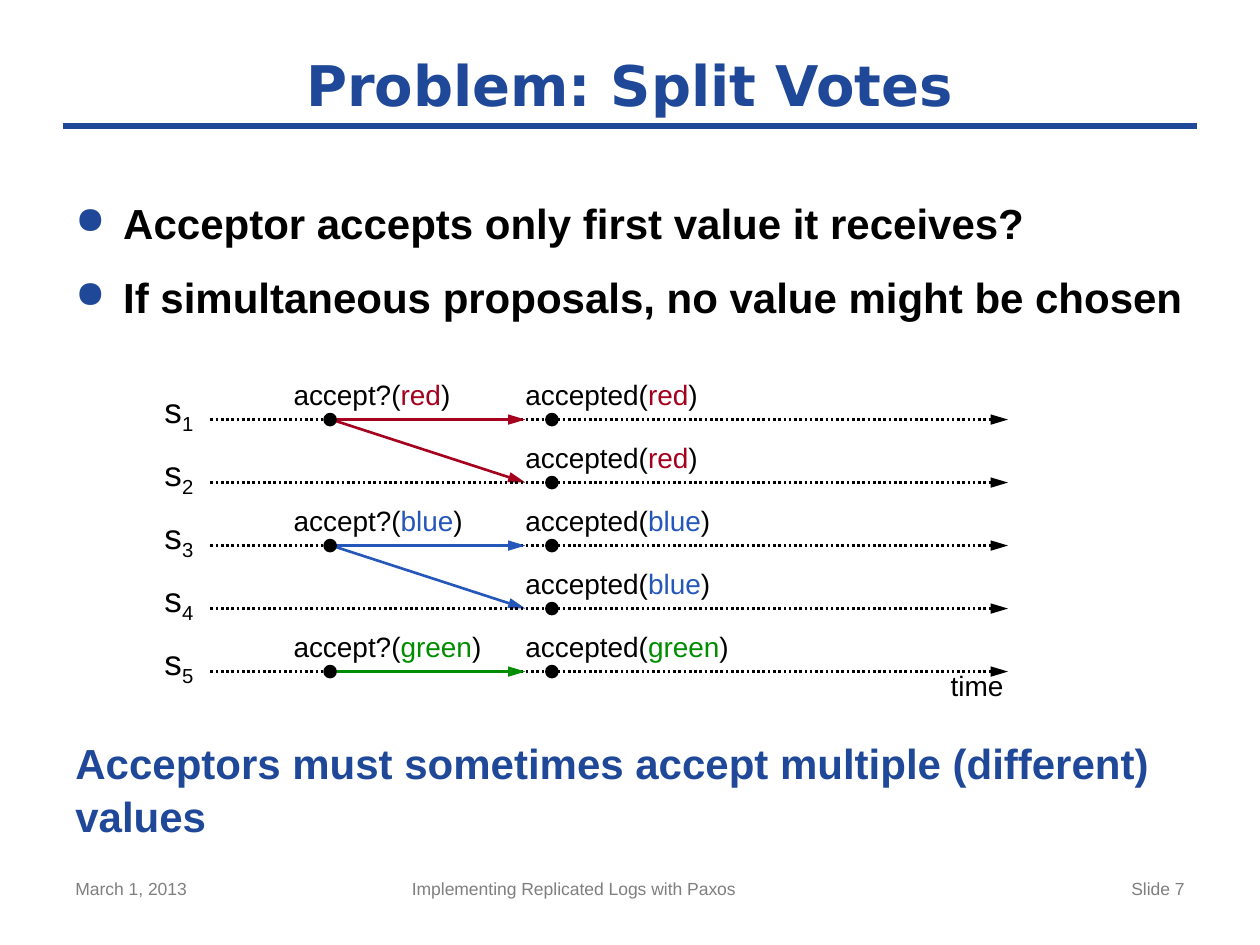
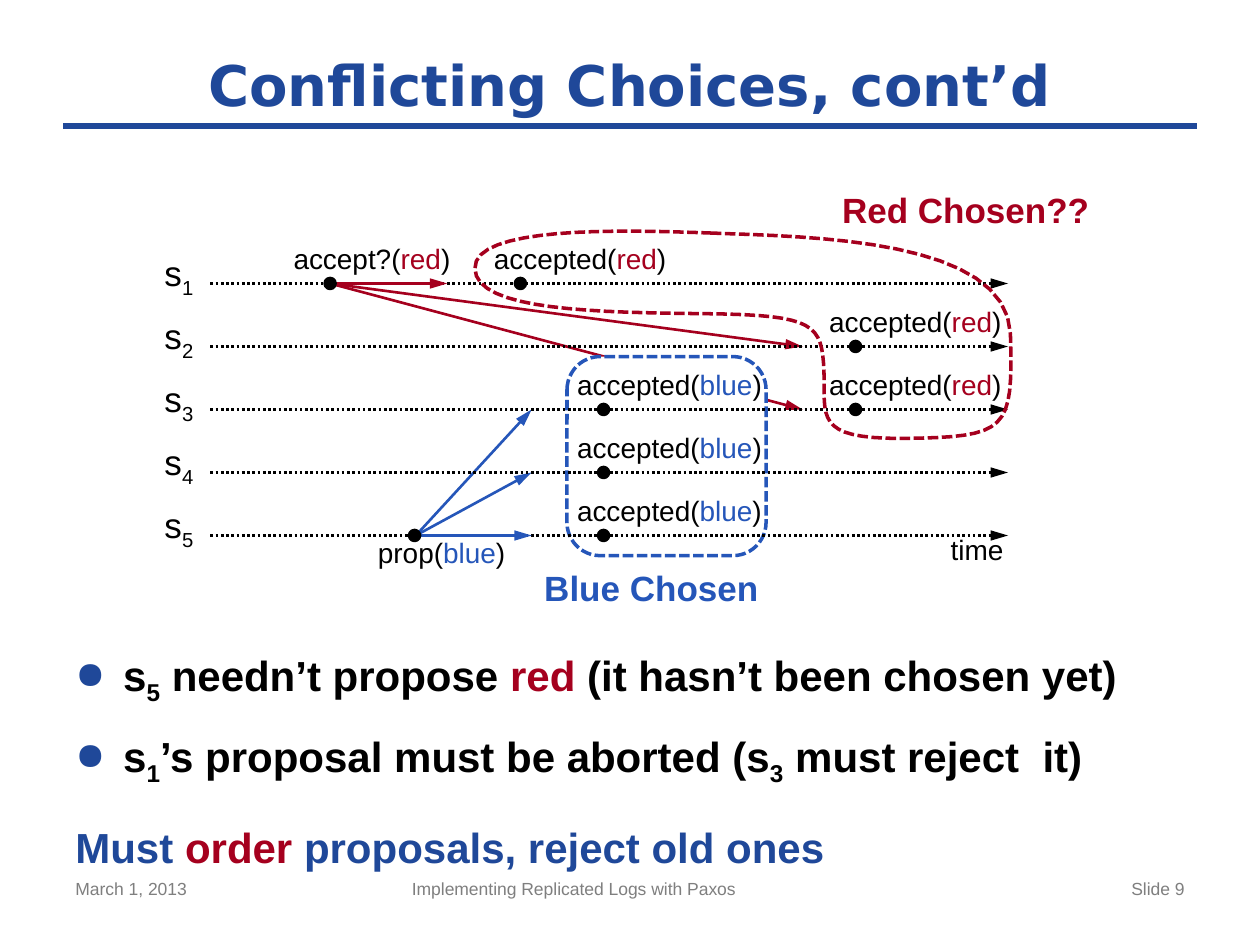
import pptx
import pptx.util
import pptx.dml.color
import pptx.enum.dml
import pptx.enum.shapes
import pptx.enum.text
import pptx.oxml.ns
import lxml.etree

Inches, Pt = pptx.util.Inches, pptx.util.Pt
RGB = pptx.dml.color.RGBColor.from_string
Dash = pptx.enum.dml.MSO_LINE
Kind = pptx.enum.shapes.MSO_SHAPE
Align = pptx.enum.text.PP_ALIGN
Anchor = pptx.enum.text.MSO_ANCHOR
Fit = pptx.enum.text.MSO_AUTO_SIZE
qn = pptx.oxml.ns.qn

HUES = {"navy": "1F4899", "black": "000000", "red": "A5001E", "blue": "2556B9",
        "green": "008E00", "gray": "7F7F7F", "white": "FFFFFF"}
GAP = 0.5  # distance between server timelines


def write(slide, box, paras, size, bold=False, align=Align.LEFT, face="Arial", tight=True):
    """Add a text box; a paragraph is a list of (text, hue, subscript) runs."""
    shape = slide.shapes.add_textbox(*map(Inches, box))
    frame = shape.text_frame
    frame.word_wrap = True
    if tight:
        frame.margin_left = frame.margin_right = frame.margin_top = frame.margin_bottom = 0
        frame.auto_size = Fit.SHAPE_TO_FIT_TEXT
    for i, runs in enumerate(paras):
        para = frame.paragraphs[0] if i == 0 else frame.add_paragraph()
        para.alignment = align
        for text, hue, *sub in runs:
            run = para.add_run()
            run.text = text
            run.font.size, run.font.bold, run.font.name = Pt(size), bold, face
            run.font.color.rgb = RGB(HUES[hue])
            if sub:
                run._r.get_or_add_rPr().set("baseline", "-25000")
    return frame


def draw(slide, ends, hue, width=1.5, dash=None, head=True):
    """Add a straight line, with an arrowhead at its far end if asked."""
    link = slide.shapes.add_connector(
        pptx.enum.shapes.MSO_CONNECTOR.STRAIGHT, *map(Inches, ends))
    link.line.color.rgb = RGB(HUES[hue])
    link.line.width = Pt(width)
    if dash:
        link.line.dash_style = dash
    if head:
        lxml.etree.SubElement(link.line._get_or_add_ln(), qn("a:tailEnd"),
                              type="triangle", w="med", len="lg")
    lxml.etree.SubElement(link._element.spPr, qn("a:effectLst"))


# Slide content; arrows are (x, row, x, row, hue), labels (left, row, verb, value, width)
split = {
    "title": "Problem: Split Votes", "page": 7, "top": 3.33,
    "body": (0.5, 1.5, 9, 1.33), "rise": 236,
    "paras": [
        [("Acceptor accepts only first value it receives?", "black")],
        [("If simultaneous proposals, no value might be chosen", "black")],
        [("Acceptors must sometimes accept multiple (different) values", "navy")]],
    "arrows": [(2.63, 3, 4.17, 4, "blue"), (2.63, 1, 4.17, 2, "red"),
               (2.63, 1, 4.17, 1, "red"), (2.63, 3, 4.17, 3, "blue"),
               (2.63, 5, 4.17, 5, "green")],
    "labels": [(2.33, 1, "accept?", "red", 1.33), (2.33, 3, "accept?", "blue", 1.58),
               (2.33, 5, "accept?", "green", 1.5), (4.17, 1, "accepted", "red", 1.75),
               (4.17, 2, "accepted", "red", 1.75), (4.17, 3, "accepted", "blue", 1.92),
               (4.17, 4, "accepted", "blue", 1.92), (4.17, 5, "accepted", "green", 2)],
    "group": None, "notes": [], "curves": []}

clash = {
    "title": "Conflicting Choices, cont’d", "page": 9, "top": 2.25,
    "body": (0.5, 5.08, 9, 1.83), "rise": 18,
    "paras": [
        [("s", "black"), ("5", "black", True), (" needn’t propose ", "black"),
         ("red", "red"), (" (it hasn’t been chosen yet)", "black")],
        [("s", "black"), ("1", "black", True), ("’s proposal must be aborted (s", "black"),
         ("3", "black", True), (" must reject  it)", "black")],
        [("Must ", "navy"), ("order", "red"), (" proposals, reject old ones", "navy")]],
    "arrows": [(2.62, 1, 6.37, 3, "red"), (2.62, 1, 6.37, 2, "red"),
               (3.3, 5, 4.22, 4, "blue"), (3.3, 5, 4.22, 3, "blue"),
               (2.63, 1, 3.55, 1, "red"), (3.3, 5, 4.22, 5, "blue")],
    "labels": [(2.33, 1, "accept?", "red", 1.33), (3, 5, "prop", "blue", 1.17),
               (3.92, 1, "accepted", "red", 1.75), (6.58, 2, "accepted", "red", 1.75),
               (6.58, 3, "accepted", "red", 1.92), (4.58, 3, "accepted", "blue", 1.92),
               (4.58, 4, "accepted", "blue", 1.92), (4.58, 5, "accepted", "blue", 2)],
    "group": (4.5, 2.83, 1.58, 1.58),
    "notes": [((6.58, 1.5, 2.17, 0.34), "Red Chosen??", "red"),
              ((4.17, 4.5, 2, 0.34), "Blue Chosen", "blue")],
    "curves": [(5.65, 1.85), (4.88, 1.82), (3.76, 1.8), (3.77, 2.13),
               (3.77, 2.47), (4.76, 2.48), (5.62, 2.49),
               (6.48, 2.5), (6.52, 2.58), (6.54, 2.94),
               (6.55, 3.31), (6.46, 3.48), (7.15, 3.48),
               (8.01, 3.47), (8.04, 3.42), (8.02, 2.65),
               (7.99, 1.89), (6.43, 1.88), (5.65, 1.85)]}

deck = pptx.Presentation()
deck.slide_width, deck.slide_height = Inches(10), Inches(7.5)

for data in (split, clash):
    slide = deck.slides.add_slide(deck.slide_layouts[6])
    rows = {n: data["top"] + GAP * (n - 1) for n in range(1, 6)}

    # Title, rule and footer
    draw(slide, (0.5, 1, 9.5, 1), "navy", width=4, head=False)
    frame = write(slide, (0.5, 0.33, 9, 0.67), [[(data["title"], "navy")]], 32, True,
                  Align.CENTER, "DejaVu Sans", tight=False)
    frame.vertical_anchor = Anchor.MIDDLE
    for left, width, text, align in (
            (0.5, 2.33, "March 1, 2013", Align.LEFT),
            (3.17, 3.75, "Implementing Replicated Logs with Paxos", Align.LEFT),
            (7.17, 2.33, f"Slide {data['page']}", Align.RIGHT)):
        write(slide, (left, 6.92, width, 0.43), [[(text, "gray")]], 10,
              align=align, tight=False)

    # Two bullets and a conclusion
    frame = write(slide, data["body"], data["paras"], 24, True, tight=False)
    for para in frame.paragraphs:
        para.line_spacing = 1.05
        para.space_before = Pt(12)
    for para in frame.paragraphs[:2]:
        props = para._p.get_or_add_pPr()
        props.set("marL", str(Inches(0.38)))
        props.set("indent", str(-Inches(0.38)))
        tint = lxml.etree.SubElement(props, qn("a:buClr"))
        lxml.etree.SubElement(tint, qn("a:srgbClr"), val=HUES["navy"])
        lxml.etree.SubElement(props, qn("a:buSzPct"), val="90000")
        lxml.etree.SubElement(props, qn("a:buChar"), char="●")
    frame.paragraphs[2].space_before = Pt(data["rise"])

    # Slanted messages, then the group box that covers them
    for x1, start, x2, end, hue in data["arrows"]:
        if start != end:
            draw(slide, (x1, rows[start], x2, rows[end]), hue)
    if data["group"]:
        group = slide.shapes.add_shape(Kind.ROUNDED_RECTANGLE, *map(Inches, data["group"]))
        group.shadow.inherit = False
        group.fill.solid()
        group.fill.fore_color.rgb = RGB(HUES["white"])
        group.line.color.rgb = RGB(HUES["blue"])
        group.line.width = Pt(2)
        group.line.dash_style = Dash.SQUARE_DOT

    # Server timelines
    for n, y in rows.items():
        draw(slide, (1.67, y, 8, y), "black", dash=Dash.ROUND_DOT)
        write(slide, (1.17, y - 0.25, 0.5, 0.34),
              [[("s", "black"), (str(n), "black", True)]], 20, align=Align.CENTER)
    write(slide, (7.42, rows[5] - 0.02, 0.67, 0.27), [[("time", "black")]], 16,
          align=Align.CENTER)

    # Level messages
    for x1, start, x2, end, hue in data["arrows"]:
        if start == end:
            draw(slide, (x1, rows[start], x2, rows[end]), hue)

    # Events: a label and its dot
    for left, row, verb, value, width in data["labels"]:
        lift = 0 if verb == "prop" else 0.33
        write(slide, (left, rows[row] - lift, width, 0.27),
              [[(verb + "(", "black"), (value, value), (")", "black")]], 16)
        shift = 0.17 if verb == "accepted" else 0.25
        dot = slide.shapes.add_shape(Kind.OVAL, Inches(left + shift),
                                     Inches(rows[row] - 0.04), Inches(0.08), Inches(0.08))
        dot.shadow.inherit = False
        dot.fill.solid()
        dot.fill.fore_color.rgb = dot.line.color.rgb = RGB(HUES["black"])
        dot.line.width = Pt(2)

    # Captions of the chosen groups
    for box, text, hue in data["notes"]:
        write(slide, box, [[(text, hue)]], 20, True, Align.CENTER)

    # Dashed outline, traced along its cubic curves
    knots = data["curves"]
    if knots:
        trace = []
        for i in range(0, len(knots) - 1, 3):
            for step in range(1, 17):
                t = step / 16
                parts = ((1 - t) ** 3, 3 * t * (1 - t) ** 2, 3 * t * t * (1 - t), t ** 3)
                trace.append(tuple(Inches(sum(w * k[axis] for w, k in zip(parts, knots[i:i + 4])))
                                   for axis in (0, 1)))
        pen = slide.shapes.build_freeform(*trace[-1])
        pen.add_line_segments(trace[:-1], close=True)
        loop = pen.convert_to_shape()
        loop.shadow.inherit = False
        loop.fill.background()
        loop.line.color.rgb = RGB(HUES["red"])
        loop.line.width = Pt(2)
        loop.line.dash_style = Dash.SQUARE_DOT

# Dash styles: the preset names used by the timelines and outlines
for slide in deck.slides:
    for dash in slide.shapes._spTree.iter(qn("a:prstDash")):
        dash.set("val", "sysDot" if dash.getparent().find(qn("a:tailEnd")) is not None
                 else "sysDash")

deck.save("out.pptx")
